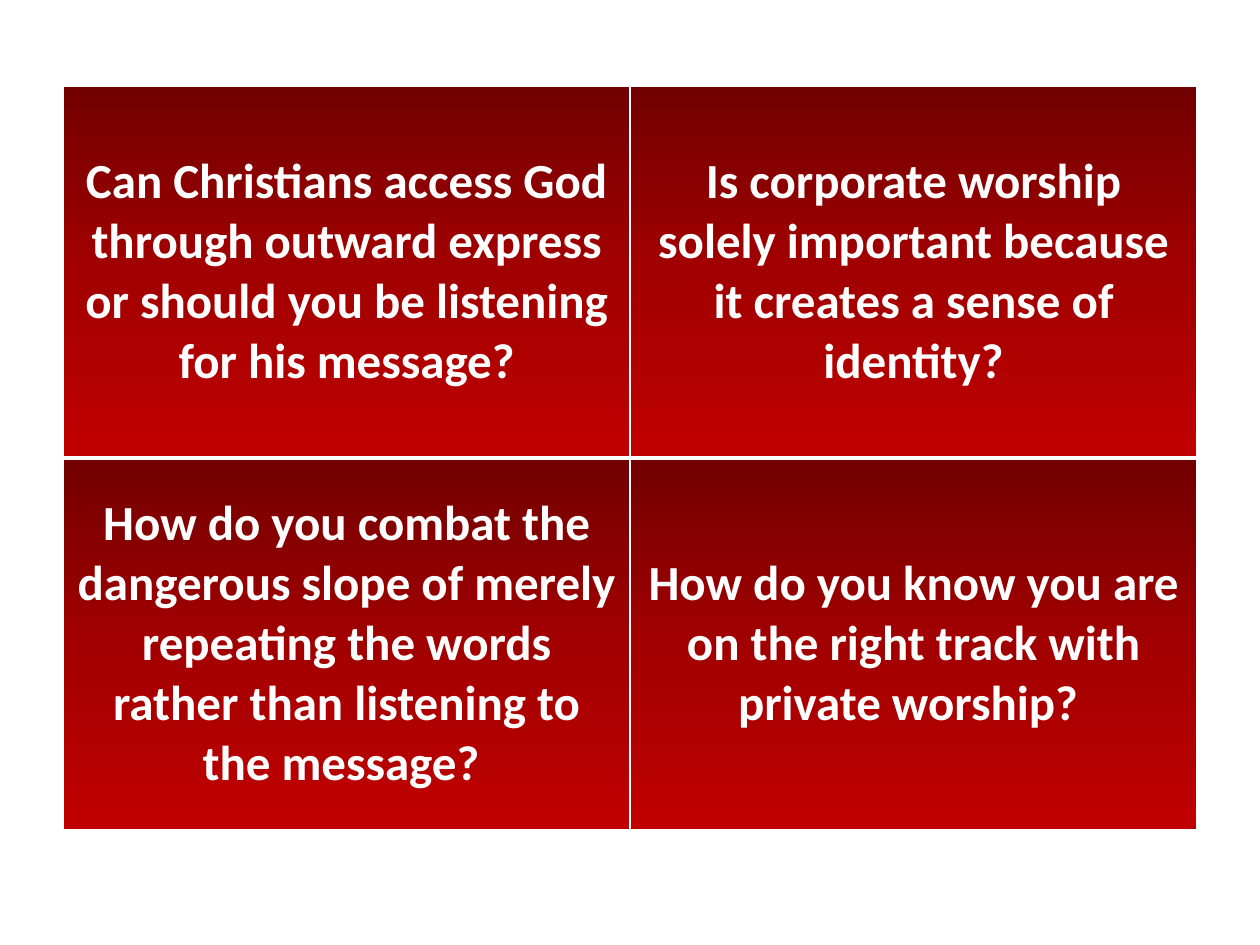
"""Build a slide with four worship questions in a two by two table."""
from dataclasses import dataclass

from lxml import etree
from pptx import Presentation
from pptx.dml.color import RGBColor
from pptx.enum.text import MSO_ANCHOR, PP_ALIGN
from pptx.oxml.ns import qn
from pptx.util import Cm, Pt

MIDDLE = MSO_ANCHOR.MIDDLE
CENTER = PP_ALIGN.CENTER
COLORS = {"white": "FFFFFF", "dark": "720000", "mid": "A20000", "red": "C00000"}
STOPS = ((0, "dark"), (50, "mid"), (100, "red"))
THIN, THICK = 1, 3


@dataclass
class Card:
    row: int
    col: int
    text: str


CARDS = [
    Card(0, 0, "Can Christians access God through outward express "
               "or should you be listening for his message?"),
    Card(0, 1, "Is corporate worship solely important because "
               "it creates a sense of identity?"),
    Card(1, 0, "How do you combat the dangerous slope of merely repeating "
               "the words rather than listening to the message? "),
    Card(1, 1, "How do you know you are on the right track "
               "with private worship? "),
]


def add_color(parent, name: str) -> None:
    etree.SubElement(parent, qn("a:srgbClr"), val=COLORS[name])


def add_edge(props, side: str, width: int) -> None:
    edge = etree.SubElement(props, qn(f"a:ln{side}"), w=str(Pt(width)))
    add_color(etree.SubElement(edge, qn("a:solidFill")), "white")


def add_fade(props) -> None:
    fade = etree.SubElement(props, qn("a:gradFill"), rotWithShape="1")
    stops = etree.SubElement(fade, qn("a:gsLst"))
    for place, name in STOPS:
        add_color(etree.SubElement(stops, qn("a:gs"), pos=str(place * 1000)), name)
    etree.SubElement(fade, qn("a:lin"), ang="5400000", scaled="0")


def draw_card(table, card: Card) -> None:
    cell = table.cell(card.row, card.col)
    cell.vertical_anchor = MIDDLE
    para = cell.text_frame.paragraphs[0]
    para.alignment = CENTER
    run = para.add_run()
    run.text = card.text
    run.font.name = "Calibri"
    run.font.size = Pt(28)
    run.font.bold = True
    run.font.color.rgb = RGBColor.from_string(COLORS["white"])
    props = cell._tc.get_or_add_tcPr()
    top, base = (THIN, THICK) if card.row == 0 else (THICK, THIN)
    for side, width in (("L", THIN), ("R", THIN), ("T", top), ("B", base)):
        add_edge(props, side, width)
    add_fade(props)


def main() -> None:
    deck = Presentation()
    deck.slide_width, deck.slide_height = Cm(25.4), Cm(19.05)
    slide = deck.slides.add_slide(deck.slide_layouts[6])
    frame = slide.shapes.add_table(2, 2, Cm(1.27), Cm(1.73), Cm(22.86), Cm(15))
    table = frame.table
    table.first_row = False
    table.horz_banding = False
    for card in CARDS:
        draw_card(table, card)
    deck.save("out.pptx")


if __name__ == "__main__":
    main()
